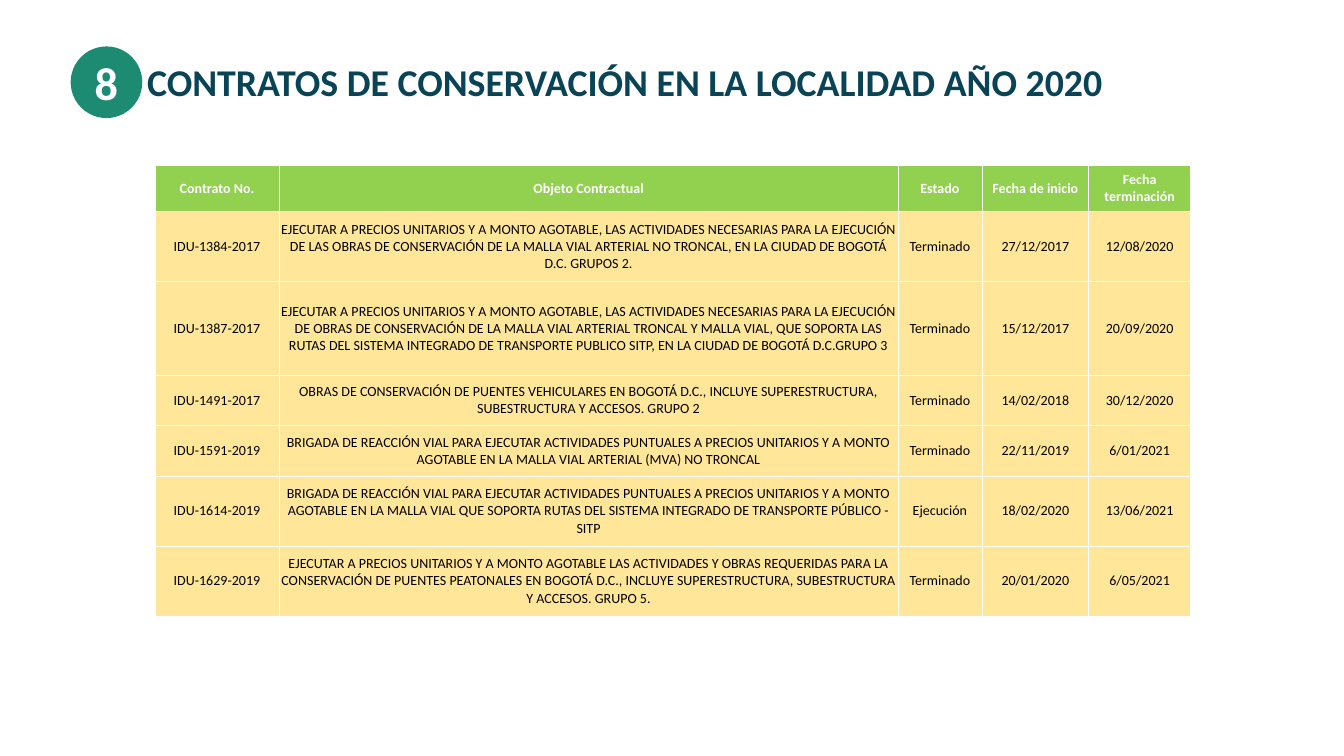
from lxml.etree import SubElement as Sub
from pptx import Presentation
from pptx.dml.color import RGBColor
from pptx.enum.shapes import MSO_SHAPE as Shape
from pptx.enum.text import MSO_ANCHOR as Anchor, PP_ALIGN as Align
from pptx.oxml.ns import qn
from pptx.util import Cm, Pt

WHITE = RGBColor(0xFF, 0xFF, 0xFF)
BLACK = RGBColor(0x00, 0x00, 0x00)
TEAL = RGBColor(0x1D, 0x8A, 0x72)
NAVY = RGBColor(0x09, 0x44, 0x56)
GREEN = RGBColor(0x92, 0xD0, 0x50)
CREAM = RGBColor(0xFF, 0xE6, 0x99)


def write(frame, text, align, size, color, bold):
    para = frame.paragraphs[0]
    para.text = text
    para.alignment = align
    look = {"name": "Calibri", "size": Pt(size), "bold": bold}
    for key, value in look.items():
        setattr(para.runs[0].font, key, value)
    para.runs[0].font.color.rgb = color
    return para


def edge(cell):
    props = cell._tc.get_or_add_tcPr()
    for side in ("lnL", "lnR", "lnT", "lnB"):
        line = Sub(props, qn(f"a:{side}"), w=str(Pt(1)))
        fill = Sub(line, qn("a:solidFill"))
        Sub(fill, qn("a:srgbClr"), val=str(WHITE))


deck = Presentation()
deck.slide_width = Cm(67.72)
deck.slide_height = Cm(38.1)
slide = deck.slides.add_slide(deck.slide_layouts[6])

badge = slide.shapes.add_shape(Shape.OVAL, Cm(3.56), Cm(2.34), Cm(3.61), Cm(3.61))
badge.shadow.inherit = False
badge.fill.solid()
badge.fill.fore_color.rgb = TEAL
badge.line.fill.background()
badge.text_frame.vertical_anchor = Anchor.MIDDLE
write(badge.text_frame, "8", Align.CENTER, 66, WHITE, True)

title = slide.shapes.add_textbox(Cm(7.16), Cm(2.51), Cm(54.66), Cm(3.43))
title.text_frame.word_wrap = True
title.text_frame.vertical_anchor = Anchor.MIDDLE
head = "CONTRATOS DE CONSERVACIÓN EN LA LOCALIDAD AÑO 2020"
write(title.text_frame, head, Align.LEFT, 54, NAVY, True).line_spacing = 0.9

rows = [
    ("Contrato No.", "Objeto Contractual", "Estado", "Fecha de inicio", "Fecha terminación"),
    ("IDU-1384-2017",
     "EJECUTAR A PRECIOS UNITARIOS Y A MONTO AGOTABLE, LAS ACTIVIDADES NECESARIAS PARA LA "
     "EJECUCIÓN DE LAS OBRAS DE CONSERVACIÓN DE LA MALLA VIAL ARTERIAL NO TRONCAL, EN LA "
     "CIUDAD DE BOGOTÁ D.C. GRUPOS 2.",
     "Terminado", "27/12/2017", "12/08/2020"),
    ("IDU-1387-2017",
     "EJECUTAR A PRECIOS UNITARIOS Y A MONTO AGOTABLE, LAS ACTIVIDADES NECESARIAS PARA LA "
     "EJECUCIÓN DE OBRAS DE CONSERVACIÓN DE LA MALLA VIAL ARTERIAL TRONCAL Y MALLA VIAL, QUE "
     "SOPORTA LAS RUTAS DEL SISTEMA INTEGRADO DE TRANSPORTE PUBLICO SITP, EN LA CIUDAD DE "
     "BOGOTÁ D.C.GRUPO 3",
     "Terminado", "15/12/2017", "20/09/2020"),
    ("IDU-1491-2017",
     "OBRAS DE CONSERVACIÓN DE PUENTES VEHICULARES EN BOGOTÁ D.C., INCLUYE SUPERESTRUCTURA, "
     "SUBESTRUCTURA Y ACCESOS. GRUPO 2",
     "Terminado", "14/02/2018", "30/12/2020"),
    ("IDU-1591-2019",
     "BRIGADA DE REACCIÓN VIAL PARA EJECUTAR ACTIVIDADES PUNTUALES A PRECIOS UNITARIOS Y A "
     "MONTO AGOTABLE EN LA MALLA VIAL ARTERIAL (MVA) NO TRONCAL",
     "Terminado", "22/11/2019", "6/01/2021"),
    ("IDU-1614-2019",
     "BRIGADA DE REACCIÓN VIAL PARA EJECUTAR ACTIVIDADES PUNTUALES A PRECIOS UNITARIOS Y A "
     "MONTO AGOTABLE EN LA MALLA VIAL QUE SOPORTA RUTAS DEL SISTEMA INTEGRADO DE TRANSPORTE "
     "PÚBLICO - SITP",
     "Ejecución", "18/02/2020", "13/06/2021"),
    ("IDU-1629-2019",
     "EJECUTAR A PRECIOS UNITARIOS Y A MONTO AGOTABLE LAS ACTIVIDADES Y OBRAS REQUERIDAS PARA "
     "LA CONSERVACIÓN DE PUENTES PEATONALES EN BOGOTÁ D.C., INCLUYE SUPERESTRUCTURA, "
     "SUBESTRUCTURA Y ACCESOS. GRUPO 5.",
     "Terminado", "20/01/2020", "6/05/2021"),
]
wide = [6.27, 31.17, 4.24, 5.38, 5.13]
high = [2.36, 3.53, 4.7, 2.54, 2.54, 3.53, 3.53]
table = slide.shapes.add_table(
    len(rows), len(wide), Cm(7.8), Cm(8.31), Cm(sum(wide)), Cm(sum(high))
).table
for col, width in zip(table.columns, wide):
    col.width = Cm(width)

inset = {
    "margin_left": Cm(0.03),
    "margin_right": Cm(0.03),
    "margin_top": Cm(0.03),
    "margin_bottom": Cm(0),
    "vertical_anchor": Anchor.MIDDLE,
}
for r, row in enumerate(rows):
    table.rows[r].height = Cm(high[r])
    top = r == 0
    for c, text in enumerate(row):
        cell = table.cell(r, c)
        for key, value in inset.items():
            setattr(cell, key, value)
        edge(cell)
        cell.fill.solid()
        cell.fill.fore_color.rgb = GREEN if top else CREAM
        write(cell.text_frame, text, Align.CENTER, 20, WHITE if top else BLACK, top)

deck.save("out.pptx")
